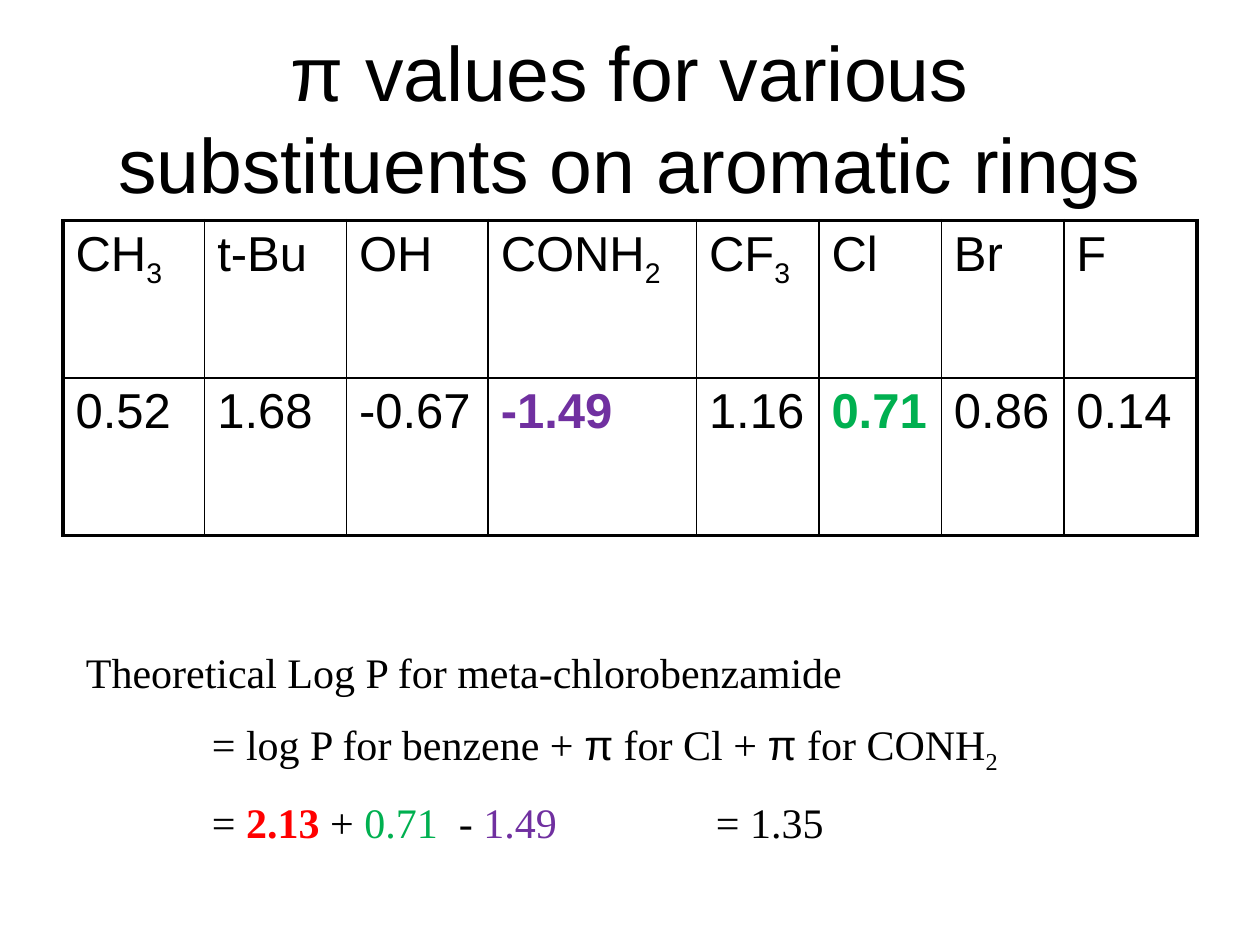
from lxml.etree import SubElement
from pptx import Presentation
from pptx.dml.color import RGBColor
from pptx.enum.text import MSO_ANCHOR, PP_ALIGN
from pptx.oxml.ns import qn
from pptx.util import Pt

BLACK, RED, GREEN, PURPLE = "000000", "FF0000", "00B050", "7030A0"
SANS, SERIF = "Arial", "Times New Roman"
COLUMN_WIDTHS = [81, 81, 81, 119, 70, 70, 70, 76]
ROW_HEIGHT = 90
TAB_WIDTH = 72
SUBSTITUENTS = [
    (["CH", "3"], "0.52", BLACK),
    (["t-Bu"], "1.68", BLACK),
    (["OH"], "-0.67", BLACK),
    (["CONH", "2"], "-1.49", PURPLE),
    (["CF", "3"], "1.16", BLACK),
    (["Cl"], "0.71", GREEN),
    (["Br"], "0.86", BLACK),
    (["F"], "0.14", BLACK),
]
CALCULATION = [
    [("Theoretical Log P for meta-chlorobenzamide", {})],
    [("\t= log P for benzene + ", {}), ("π", {"font": SANS}),
     (" for Cl + ", {}), ("π", {"font": SANS}),
     (" for CONH", {}), ("2", {"subscript": True})],
    [("\t= ", {}), ("2.13", {"color": RED, "bold": True}), (" + ", {}),
     ("0.71", {"color": GREEN}), ("  - ", {}),
     ("1.49 \t\t", {"color": PURPLE}), ("= 1.35", {})],
]


def set_color(color_owner, value):
    color_owner.rgb = RGBColor.from_string(value)


def add_run(paragraph, text, size, font=SANS, color=BLACK, bold=False, subscript=False):
    run = paragraph.add_run()
    run.text = text
    run.font.size = Pt(size)
    run.font.name = font
    run.font.bold = bold
    set_color(run.font.color, color)
    if subscript:
        run.font._element.set("baseline", "-25000")


def add_title(slide, text):
    title = slide.shapes.title
    title.left, title.top, title.width, title.height = Pt(36), Pt(21.6), Pt(648), Pt(90)
    title.text_frame.vertical_anchor = MSO_ANCHOR.MIDDLE
    paragraph = title.text_frame.paragraphs[0]
    paragraph.alignment = PP_ALIGN.CENTER
    add_run(paragraph, text, 44)


def set_borders(cell, widths):
    properties = cell._tc.get_or_add_tcPr()
    for side, width in zip("LRTB", widths):
        line = SubElement(properties, qn(f"a:ln{side}"), w=str(Pt(width)))
        fill = SubElement(line, qn("a:solidFill"))
        SubElement(fill, qn("a:srgbClr"), val=BLACK)


def add_value_table(slide):
    column_count = len(SUBSTITUENTS)
    frame = slide.shapes.add_table(2, column_count, Pt(36), Pt(126),
                                   Pt(sum(COLUMN_WIDTHS)), Pt(2 * ROW_HEIGHT))
    table = frame.table
    table.first_row = table.horz_banding = False
    for row in table.rows:
        row.height = Pt(ROW_HEIGHT)
    for index, (formula, value, color) in enumerate(SUBSTITUENTS):
        table.columns[index].width = Pt(COLUMN_WIDTHS[index])
        name_cell, value_cell = table.cell(0, index), table.cell(1, index)
        for position, part in enumerate(formula):
            add_run(name_cell.text_frame.paragraphs[0], part, 28, subscript=position == 1)
        add_run(value_cell.text_frame.paragraphs[0], value, 28,
                color=color, bold=color != BLACK)
        for row_index, cell in enumerate((name_cell, value_cell)):
            outer_sides = (index == 0, index == column_count - 1,
                           row_index == 0, row_index == 1)
            set_borders(cell, [2.25 if outer else 1 for outer in outer_sides])
            cell.fill.background()


def add_calculation(slide):
    box = slide.shapes.add_textbox(Pt(42), Pt(366), Pt(564), Pt(124))
    text_frame = box.text_frame
    text_frame.word_wrap = True
    for index, pieces in enumerate(CALCULATION):
        paragraph = text_frame.paragraphs[0] if index == 0 else text_frame.add_paragraph()
        paragraph.space_before = Pt(12)
        paragraph._p.get_or_add_pPr().set("defTabSz", str(Pt(TAB_WIDTH)))
        for text, style in pieces:
            add_run(paragraph, text, 24, **{"font": SERIF, **style})


def main():
    presentation = Presentation()
    presentation.slide_width, presentation.slide_height = Pt(720), Pt(540)
    slide = presentation.slides.add_slide(presentation.slide_layouts[5])
    add_title(slide, "π values for various substituents on aromatic rings")
    add_value_table(slide)
    add_calculation(slide)
    presentation.save("out.pptx")


if __name__ == "__main__":
    main()
